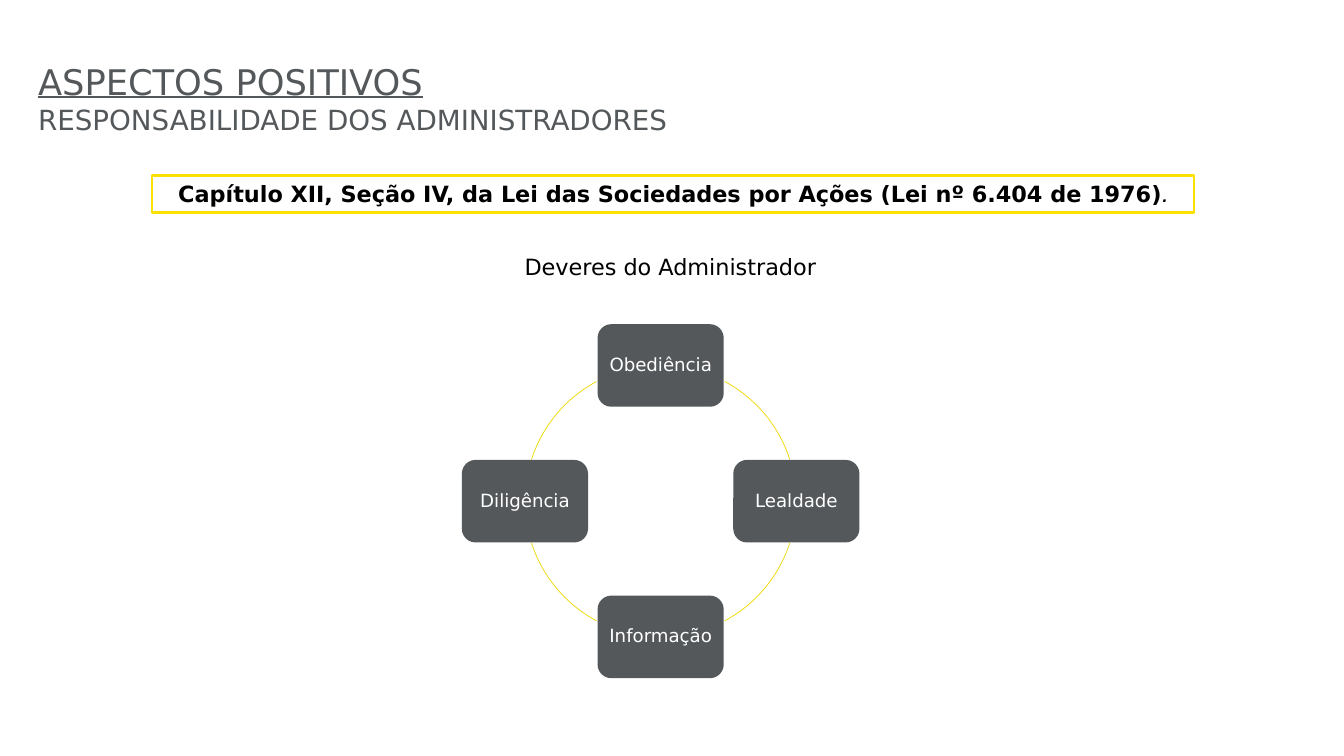
from math import cos, radians, sin

from pptx import Presentation
from pptx.dml.color import RGBColor
from pptx.enum.shapes import MSO_SHAPE as SHAPE
from pptx.enum.text import MSO_ANCHOR as ANCHOR, PP_ALIGN as ALIGN
from pptx.util import Cm, Pt

GRAY = RGBColor(0x54, 0x58, 0x5A)
YELLOW = RGBColor(0xFA, 0xE1, 0x00)
RING_YELLOW = RGBColor(0xEE, 0xD7, 0x00)
BLACK = RGBColor(0, 0, 0)
WHITE = RGBColor(255, 255, 255)
FONT = "DejaVu Sans"

DUTIES = ["Obediência", "Lealdade", "Informação", "Diligência"]  # clockwise from the top


def add_run(p, text, size, color, bold=False, italic=False, underline=False):
    r = p.add_run()
    r.text = text
    font = r.font
    font.name, font.size, font.color.rgb = FONT, Pt(size), color
    font.bold, font.italic, font.underline = bold, italic, underline


def set_frame(tf, inset_x, inset_y, wrap=True):
    tf.word_wrap = wrap
    tf.vertical_anchor = ANCHOR.MIDDLE
    tf.margin_left = tf.margin_right = Cm(inset_x)
    tf.margin_top = tf.margin_bottom = Cm(inset_y)


def add_plain_shape(s, kind, x, y, w, h, fill=None, line=None, line_width=0):
    sp = s.shapes.add_shape(kind, Cm(x), Cm(y), Cm(w), Cm(h))
    sp.shadow.inherit = False
    if fill is None:
        sp.fill.background()
    else:
        sp.fill.solid()
        sp.fill.fore_color.rgb = fill
    if line is None:
        sp.line.fill.background()
    else:
        sp.line.color.rgb = line
        sp.line.width = Pt(line_width)
    return sp


def add_title(s, x, y, w, h):
    tf = s.shapes.add_textbox(Cm(x), Cm(y), Cm(w), Cm(h)).text_frame
    set_frame(tf, 0, 0)
    add_run(tf.paragraphs[0], "ASPECTOS POSITIVOS", 25.2, GRAY, underline=True)
    add_run(tf.add_paragraph(), "RESPONSABILIDADE DOS ADMINISTRADORES", 19.8, GRAY)


def add_law_banner(s, x, y, w, h):
    sp = add_plain_shape(s, SHAPE.RECTANGLE, x, y, w, h, line=YELLOW, line_width=2)
    set_frame(sp.text_frame, 0.25, 0.13)
    p = sp.text_frame.paragraphs[0]
    p.alignment = ALIGN.CENTER
    add_run(p, "Capítulo XII, Seção IV, da Lei das Sociedades por Ações "
               "(Lei nº 6.404 de 1976)", 16, BLACK, bold=True)
    add_run(p, ".", 10, BLACK, bold=True, italic=True)


def add_caption(s, x, y, w, h):
    tf = s.shapes.add_textbox(Cm(x), Cm(y), Cm(w), Cm(h)).text_frame
    set_frame(tf, 0.25, 0.13, wrap=False)
    add_run(tf.paragraphs[0], "Deveres do Administrador", 16, BLACK)


def add_duty_cycle(s, x, y, w, h, node_w=3.18, node_h=2.08):
    """Place the duties on a circle whose outer nodes touch the given box."""
    radius = (w - node_w) / 2
    cx, cy = x + w / 2, y + h / 2
    # Each quarter arc stops at the edges of its two nodes.
    arcs = [(17.9, 61.8), (118.2, 162.1), (197.9, 241.8), (298.2, 342.1)]
    for start, end in arcs:
        arc = add_plain_shape(s, SHAPE.ARC, cx - radius, cy - radius,
                              2 * radius, 2 * radius, line=RING_YELLOW, line_width=0.5)
        # Adjustments count 100000ths, arc angles 60000ths of a degree.
        arc.adjustments[0] = start * 0.6
        arc.adjustments[1] = end * 0.6
    for i, duty in enumerate(DUTIES):
        angle = radians(360 / len(DUTIES) * i - 90)
        sp = add_plain_shape(s, SHAPE.ROUNDED_RECTANGLE,
                             cx + radius * cos(angle) - node_w / 2,
                             cy + radius * sin(angle) - node_h / 2,
                             node_w, node_h, fill=GRAY)
        # Rounded corners already inset the text, so the margins stay small.
        set_frame(sp.text_frame, 0.05, 0.05)
        p = sp.text_frame.paragraphs[0]
        p.alignment = ALIGN.CENTER
        p.line_spacing = 0.9
        add_run(p, duty, 13, WHITE)


def main():
    prs = Presentation()
    prs.slide_width, prs.slide_height = Cm(33.87), Cm(19.05)
    s = prs.slides.add_slide(prs.slide_layouts[6])
    add_title(s, 0.96, 1.47, 32, 2)
    add_law_banner(s, 3.83, 4.42, 26.26, 0.94)
    add_duty_cycle(s, 11.64, 8.17, 10.02, 8.92)
    add_caption(s, 12.97, 6.25, 7.98, 0.94)
    prs.save("out.pptx")


if __name__ == "__main__":
    main()
